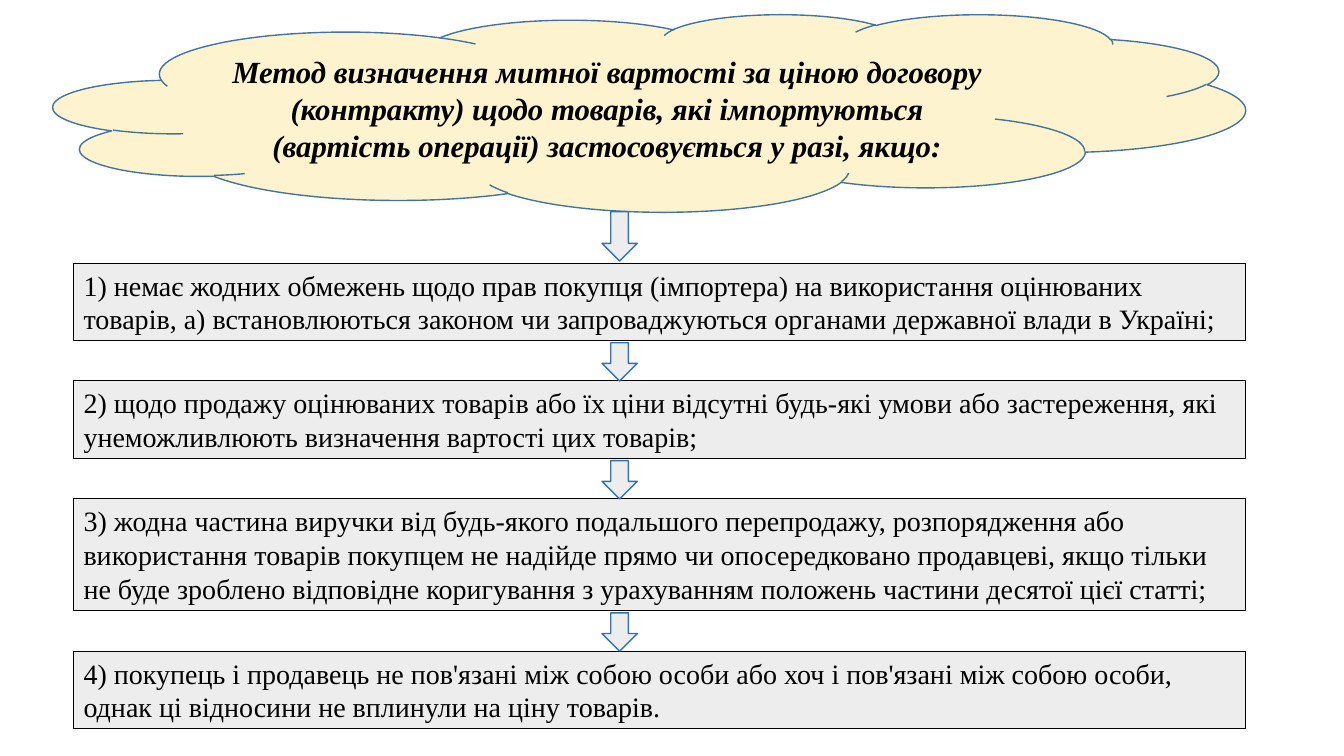
from dataclasses import dataclass

from pptx import Presentation
from pptx.dml.color import RGBColor
from pptx.enum.shapes import MSO_SHAPE
from pptx.enum.text import MSO_ANCHOR, MSO_AUTO_SIZE, PP_ALIGN
from pptx.shapes.autoshape import Shape
from pptx.util import Inches, Pt

WIDTH, HEIGHT = Inches(13.33), Inches(7.5)
COL, ROW = WIDTH / 100, HEIGHT / 100

BOX_LEFT, BOX_WIDTH = 5.48, 87.17
FIRST_BOX_TOP, BOX_GAP = 34.8, 5.33
ARROW_LEFT, ARROW_WIDTH, ARROW_HEIGHT, ARROW_OFFSET = 44.79, 2.63, 5.07, 0.27
GREY, BLUE = "EDEDED", "2E75B6"


@dataclass(frozen=True)
class Area:
    left: float
    top: float
    width: float
    height: float


@dataclass(frozen=True)
class Condition:
    text: str
    height: float


TITLE = (
    "Метод визначення митної вартості за ціною договору (контракту) щодо товарів, "
    "які імпортуються (вартість операції) застосовується у разі, якщо:"
)
CONDITIONS = [
    Condition(
        "1) немає жодних обмежень щодо прав покупця (імпортера) на використання "
        "оцінюваних товарів, а) встановлюються законом чи запроваджуються органами "
        "державної влади в Україні;",
        10.27,
    ),
    Condition(
        "2) щодо продажу оцінюваних товарів або їх ціни відсутні будь-які умови або "
        "застереження, які унеможливлюють визначення вартості цих товарів;",
        10.27,
    ),
    Condition(
        "3) жодна частина виручки від будь-якого подальшого перепродажу, розпорядження "
        "або використання товарів покупцем не надійде прямо чи опосередковано продавцеві, "
        "якщо тільки не буде зроблено відповідне коригування з урахуванням положень "
        "частини десятої цієї статті;",
        14.8,
    ),
    Condition(
        "4) покупець і продавець не пов'язані між собою особи або хоч і пов'язані між "
        "собою особи, однак ці відносини не вплинули на ціну товарів.",
        10.27,
    ),
]


def color(value: str) -> RGBColor:
    return RGBColor.from_string(value)


def add_figure(shapes, kind: MSO_SHAPE, area: Area, fill: str, line: str, weight: float) -> Shape:
    sp = shapes.add_shape(
        kind,
        round(area.left * COL),
        round(area.top * ROW),
        round(area.width * COL),
        round(area.height * ROW),
    )
    sp.shadow.inherit = False
    sp.fill.solid()
    sp.fill.fore_color.rgb = color(fill)
    sp.line.color.rgb = color(line)
    sp.line.width = Pt(weight)
    return sp


def write(sp: Shape, text: str, align: PP_ALIGN, frame: dict, font: dict) -> None:
    tf = sp.text_frame
    for name, value in frame.items():
        setattr(tf, name, value)
    p = tf.paragraphs[0]
    p.alignment = align
    r = p.add_run()
    r.text = text
    for name, value in ({"name": "Times New Roman"} | font).items():
        setattr(r.font, name, value)
    r.font.color.rgb = color("000000")


def main() -> None:
    prs = Presentation()
    prs.slide_width, prs.slide_height = WIDTH, HEIGHT
    s = prs.slides.add_slide(prs.slide_layouts[6])

    cloud = add_figure(s.shapes, MSO_SHAPE.CLOUD, Area(3.98, 1.87, 88.67, 26.13), "FDF4CF", "43739E", 1)
    write(
        cloud, TITLE, PP_ALIGN.CENTER,
        {"word_wrap": True, "vertical_anchor": MSO_ANCHOR.MIDDLE},
        {"size": Pt(22), "bold": True, "italic": True},
    )

    boxes = s.shapes.add_group_shape().shapes
    arrows = [Area(ARROW_LEFT, 28, ARROW_WIDTH, 6.53)]
    top = FIRST_BOX_TOP
    for condition in CONDITIONS:
        area = Area(BOX_LEFT, top, BOX_WIDTH, condition.height)
        box = add_figure(boxes, MSO_SHAPE.RECTANGLE, area, GREY, "000000", 0.75)
        write(
            box, condition.text, PP_ALIGN.LEFT,
            {"word_wrap": True, "vertical_anchor": MSO_ANCHOR.TOP,
             "auto_size": MSO_AUTO_SIZE.SHAPE_TO_FIT_TEXT},
            {"size": Pt(20)},
        )
        bottom = top + condition.height
        arrows.append(Area(ARROW_LEFT, bottom + ARROW_OFFSET, ARROW_WIDTH, ARROW_HEIGHT))
        top = bottom + BOX_GAP

    for area in arrows[:-1]:
        add_figure(s.shapes, MSO_SHAPE.DOWN_ARROW, area, GREY, BLUE, 1)

    prs.save("out.pptx")


if __name__ == "__main__":
    main()
